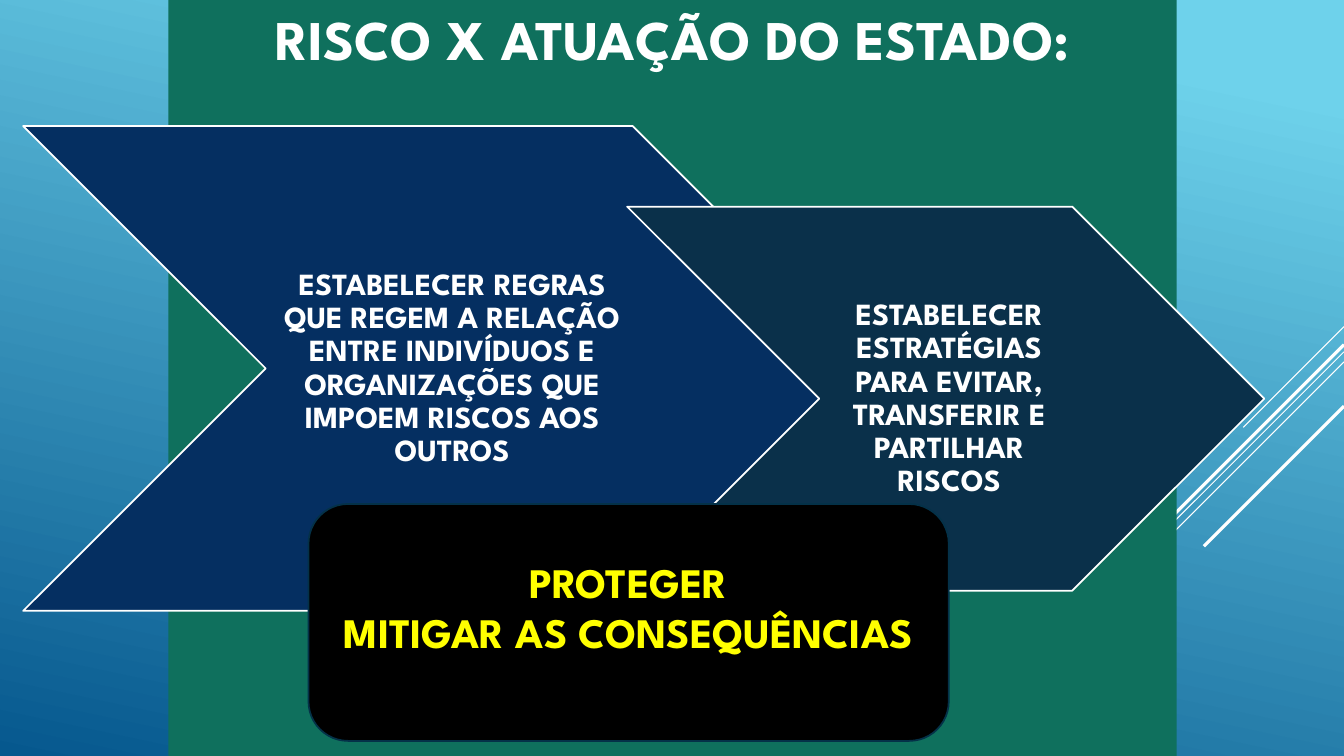
from lxml import etree
from pptx import Presentation
from pptx.dml.color import RGBColor
from pptx.enum import shapes, text
from pptx.oxml.ns import qn
from pptx.util import Inches, Pt


def color(hex_code):
    return RGBColor.from_string(hex_code)


def write(shape, content, size, font_color="FFFFFF", line_spacing=None,
          anchor=text.MSO_ANCHOR.MIDDLE, insets=(0.1, 0.05, 0.1, 0.05)):
    """Fill a shape with centred bold text, one paragraph per line; insets run left, top, right, bottom."""
    frame = shape.text_frame
    frame.word_wrap = True
    frame.vertical_anchor = anchor
    frame.margin_left, frame.margin_top, frame.margin_right, frame.margin_bottom = map(Inches, insets)
    frame.text = content
    for paragraph in frame.paragraphs:
        paragraph.alignment = text.PP_ALIGN.CENTER
        paragraph.line_spacing = line_spacing
        font = paragraph.runs[0].font
        font.name = "League Spartan"
        font.size = Pt(size)
        font.bold = True
        font.color.rgb = color(font_color)


presentation = Presentation()
presentation.slide_width = Inches(13.33)
presentation.slide_height = Inches(7.5)
slide = presentation.slides.add_slide(presentation.slide_layouts[6])

# Background gradient
background = slide.background.fill
background.gradient()
background.gradient_angle = 258
for stop, (position, hex_code) in zip(background.gradient_stops, [(0.1, "6ED2EB"), (1, "06588E")]):
    stop.position = position
    stop.color.rgb = color(hex_code)

# Diagonal strokes, all at 45 degrees from the right edge: start height, run, width
for top, run, width in [(3.24, 1, 0.75), (3.49, 3.26, 0.75), (3.59, 2.07, 0.75),
                        (3.42, 1.91, 2.25), (4.03, 1.39, 2.25)]:
    stroke = slide.shapes.add_connector(
        shapes.MSO_CONNECTOR.STRAIGHT,
        Inches(13.33), Inches(top), Inches(13.33 - run), Inches(top + run))
    stroke.line.color.rgb = color("FFFFFF")
    stroke.line.width = Pt(width)
    etree.SubElement(stroke._element.spPr, qn("a:effectLst"))

# Title panel, chevrons and callout: kind, box, fill, outline
blocks = []
for kind, box, fill, outline in [
    (shapes.MSO_SHAPE.RECTANGLE, (1.67, 0, 10, 7.5), "0F705D", None),
    (shapes.MSO_SHAPE.CHEVRON, (0.23, 1.25, 8.45, 4.81), "052F61", "FFFFFF"),
    (shapes.MSO_SHAPE.CHEVRON, (6.22, 2.05, 6.32, 3.81), "0A304A", "FFFFFF"),
    (shapes.MSO_SHAPE.FLOWCHART_ALTERNATE_PROCESS, (3.06, 5, 6.35, 2.35), "000000", "043148"),
]:
    block = slide.shapes.add_shape(kind, *map(Inches, box))
    block.shadow.inherit = False
    block.fill.solid()
    block.fill.fore_color.rgb = color(fill)
    if outline:
        block.line.color.rgb = color(outline)
        block.line.width = Pt(1.25)
    else:
        block.line.fill.background()
    blocks.append(block)

panel, rules_chevron, strategies_chevron, callout = blocks
write(panel, "RISCO X ATUAÇÃO DO ESTADO:", size=40, anchor=text.MSO_ANCHOR.TOP)
write(callout, "PROTEGER\nMITIGAR AS CONSEQUÊNCIAS", size=30, font_color="FFFF00",
      insets=(0.1, 0.05, 0.1, 0.36))

# Chevron labels, as tall as their chevrons
for chevron, left, width, content in [
    (rules_chevron, 2.63, 3.64,
     "ESTABELECER REGRAS QUE REGEM A RELAÇÃO ENTRE INDIVÍDUOS E ORGANIZAÇÕES QUE IMPOEM RISCOS AOS OUTROS"),
    (strategies_chevron, 8.12, 2.52,
     "ESTABELECER ESTRATÉGIAS PARA EVITAR, TRANSFERIR E PARTILHAR RISCOS"),
]:
    label = slide.shapes.add_textbox(Inches(left), chevron.top, Inches(width), chevron.height)
    write(label, content, size=22, line_spacing=0.9, insets=(0.1, 0.03, 0.03, 0.03))

presentation.save("out.pptx")
